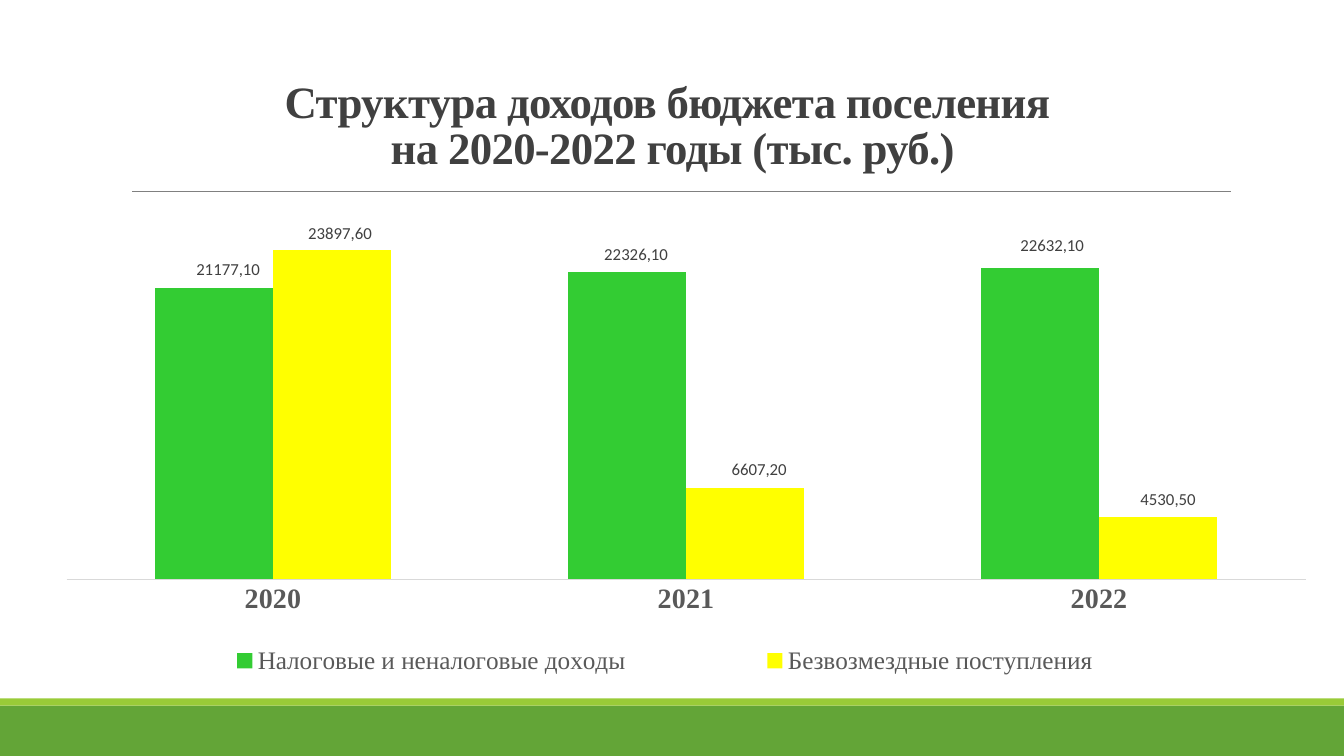
import pptx
import pptx.chart.data
import pptx.dml.color
import pptx.enum.chart
import pptx.enum.shapes
import pptx.enum.text
import pptx.oxml
import pptx.oxml.ns
import pptx.util
from dataclasses import dataclass

Inches, Pt = pptx.util.Inches, pptx.util.Pt
qn = pptx.oxml.ns.qn

# Content
HEAD = ["Структура доходов бюджета поселения ", "на 2020-2022 годы (тыс. руб.)"]
YEARS = ["2020", "2021", "2022"]
# name, color, values, label shifts in inches
SETS = [
    ("Налоговые и неналоговые доходы", "33CC33", [21177.1, 22326.1, 22632.1],
     [(0.14, -0.04), (0.09, -0.03), (0.12, -0.08)]),
    ("Безвозмездные поступления", "FFFF00", [23897.6, 6607.2, 4530.5],
     [(0.08, -0.03), (0.14, -0.05), (0.1, -0.03)]),
]
BANDS = [(7, 0.5, "63A537"), (6.93, 0.07, "99CB38")]
WIDE, HIGH = 13.33, 7.5
# Chart box on the slide; plot and legend boxes inside it
CHART = (0.49, 1.48, 12.63, 5.33)
PLOT = (0.17, 0.17, 12.29, 4.1)
KEY = (0.54, 4.86, 11.13, 0.43)


@dataclass
class Theme:
    serif: str = "Times New Roman"
    sans: str = "Calibri"
    dark: str = "404040"
    gray: str = "595959"
    rule: str = "808080"
    axis: str = "D9D9D9"
    head: int = 32
    year: int = 20
    key: int = 18
    label: int = 12
    base: int = 10


LOOK = Theme()


def tint(code):
    return pptx.dml.color.RGBColor.from_string(code)


def style(font, face, size, code, bold=False):
    font.name, font.size, font.bold = face, Pt(size), bold
    font.color.rgb = tint(code)


def place(node, after, box, **modes):
    """Give a chart part a manual layout; the box is in inches."""
    sizes = CHART[2:] * 2
    shares = {key: val / size for key, val, size in zip("xywh", box, sizes)}
    inner = "".join(f'<c:{key} val="{val}"/>'
                    for key, val in (modes | shares).items())
    space = pptx.oxml.ns.nsdecls("c")
    layout = pptx.oxml.parse_xml(
        f"<c:layout {space}><c:manualLayout>{inner}</c:manualLayout></c:layout>")
    for old in node.findall(qn("c:layout")):
        node.remove(old)
    if after is None:
        node.insert(0, layout)
    else:
        node.find(qn(after)).addnext(layout)


def hide_leads(node):
    """Turn off leader lines between bars and labels."""
    space = pptx.oxml.ns.nsdecls("c")
    node.append(pptx.oxml.parse_xml(
        f'<c:extLst {space}>'
        '<c:ext uri="{CE6537A1-D6FC-4f65-9D91-7224C49458BB}" '
        'xmlns:c15="http://schemas.microsoft.com/office/drawing/2012/chart">'
        '<c15:showLeaderLines val="0"/></c:ext></c:extLst>'))


def add_base(slide):
    # Bottom bands
    for top, tall, code in BANDS:
        band = slide.shapes.add_shape(
            pptx.enum.shapes.MSO_SHAPE.RECTANGLE,
            0, Inches(top), Inches(WIDE), Inches(tall))
        band.shadow.inherit = False
        band.fill.solid()
        band.fill.fore_color.rgb = tint(code)
        band.line.fill.background()

    # Rule under the title
    rule = slide.shapes.add_connector(
        pptx.enum.shapes.MSO_CONNECTOR.STRAIGHT,
        Inches(1.31), Inches(1.9), Inches(12.21), Inches(1.9))
    rule.line.color.rgb = tint(LOOK.rule)
    rule.line.width = Pt(0.5)
    props = rule._element.spPr
    props.append(props.makeelement(qn("a:effectLst"), {}))


def add_title(slide):
    title = slide.shapes.title
    title.left, title.top = Inches(1), Inches(0.69)
    title.width, title.height = Inches(11.34), Inches(1.08)
    frame = title.text_frame
    frame.word_wrap = True
    frame.auto_size = pptx.enum.text.MSO_AUTO_SIZE.NONE
    frame.vertical_anchor = pptx.enum.text.MSO_ANCHOR.BOTTOM
    para = frame.paragraphs[0]
    para.alignment = pptx.enum.text.PP_ALIGN.CENTER
    para.line_spacing = 0.85
    for num, line in enumerate(HEAD):
        if num:
            para.add_line_break()
        run = para.add_run()
        run.text = line
        style(run.font, LOOK.serif, LOOK.head, LOOK.dark, True)
        run._r.get_or_add_rPr().set("spc", "-50")


def add_chart(slide):
    data = pptx.chart.data.CategoryChartData()
    data.categories = YEARS
    for name, code, vals, shifts in SETS:
        data.add_series(name, vals)
    chart = slide.shapes.add_chart(
        pptx.enum.chart.XL_CHART_TYPE.COLUMN_CLUSTERED,
        *map(Inches, CHART), data).chart
    style(chart.font, LOOK.sans, LOOK.base, "000000")
    chart.has_title = False

    # Axes
    none = pptx.enum.chart.XL_TICK_MARK.NONE
    years = chart.category_axis
    years.major_tick_mark = years.minor_tick_mark = none
    years.format.line.color.rgb = tint(LOOK.axis)
    years.format.line.width = Pt(0.75)
    style(years.tick_labels.font, LOOK.serif, LOOK.year, LOOK.gray, True)
    scale = chart.value_axis
    scale.minimum_scale, scale.maximum_scale = 0, 30000
    scale.has_major_gridlines = False
    scale.visible = False

    # Legend
    chart.has_legend = True
    key = chart.legend
    key.position = pptx.enum.chart.XL_LEGEND_POSITION.BOTTOM
    key.include_in_layout = False
    style(key.font, LOOK.serif, LOOK.key, LOOK.gray)
    place(key._element, "c:legendPos", KEY, xMode="edge", yMode="edge")

    # Bars and their labels
    plot = chart.plots[0]
    plot.gap_width, plot.overlap = 150, 0
    plot.vary_by_categories = False
    outer = pptx.enum.chart.XL_LABEL_POSITION.OUTSIDE_END
    for bars, (name, code, vals, shifts) in zip(plot.series, SETS):
        bars.format.fill.solid()
        bars.format.fill.fore_color.rgb = tint(code)
        bars.invert_if_negative = False
        labels = bars.data_labels
        labels.show_value = True
        labels.position = outer
        style(labels.font, LOOK.sans, LOOK.label, LOOK.dark, True)
        for num, (val, shift) in enumerate(zip(vals, shifts)):
            label = bars.points[num].data_label
            run = label.text_frame.paragraphs[0].add_run()
            run.text = f"{val:.2f}".replace(".", ",")
            style(run.font, LOOK.sans, LOOK.label, LOOK.dark)
            label.position = outer
            node = labels._element.findall(qn("c:dLbl"))[num]
            place(node, "c:idx", shift)
        hide_leads(labels._element)

    # Plot area
    place(chart._chartSpace.chart.plotArea, None, PLOT,
          layoutTarget="inner", xMode="edge", yMode="edge")


def main():
    deck = pptx.Presentation()
    deck.slide_width, deck.slide_height = Inches(WIDE), Inches(HIGH)
    slide = deck.slides.add_slide(deck.slide_layouts[5])
    add_base(slide)
    add_title(slide)
    add_chart(slide)
    deck.save("out.pptx")


if __name__ == "__main__":
    main()
